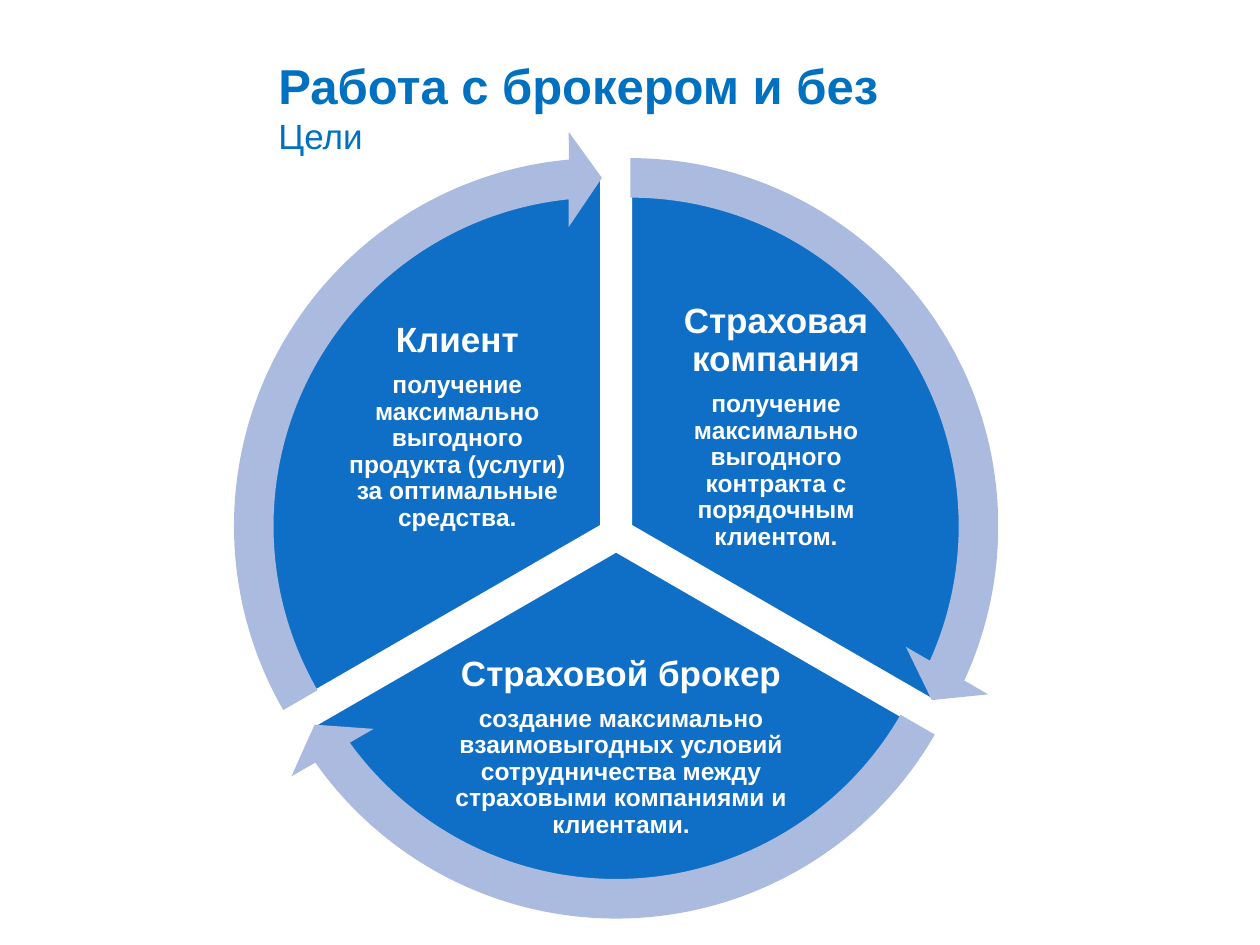
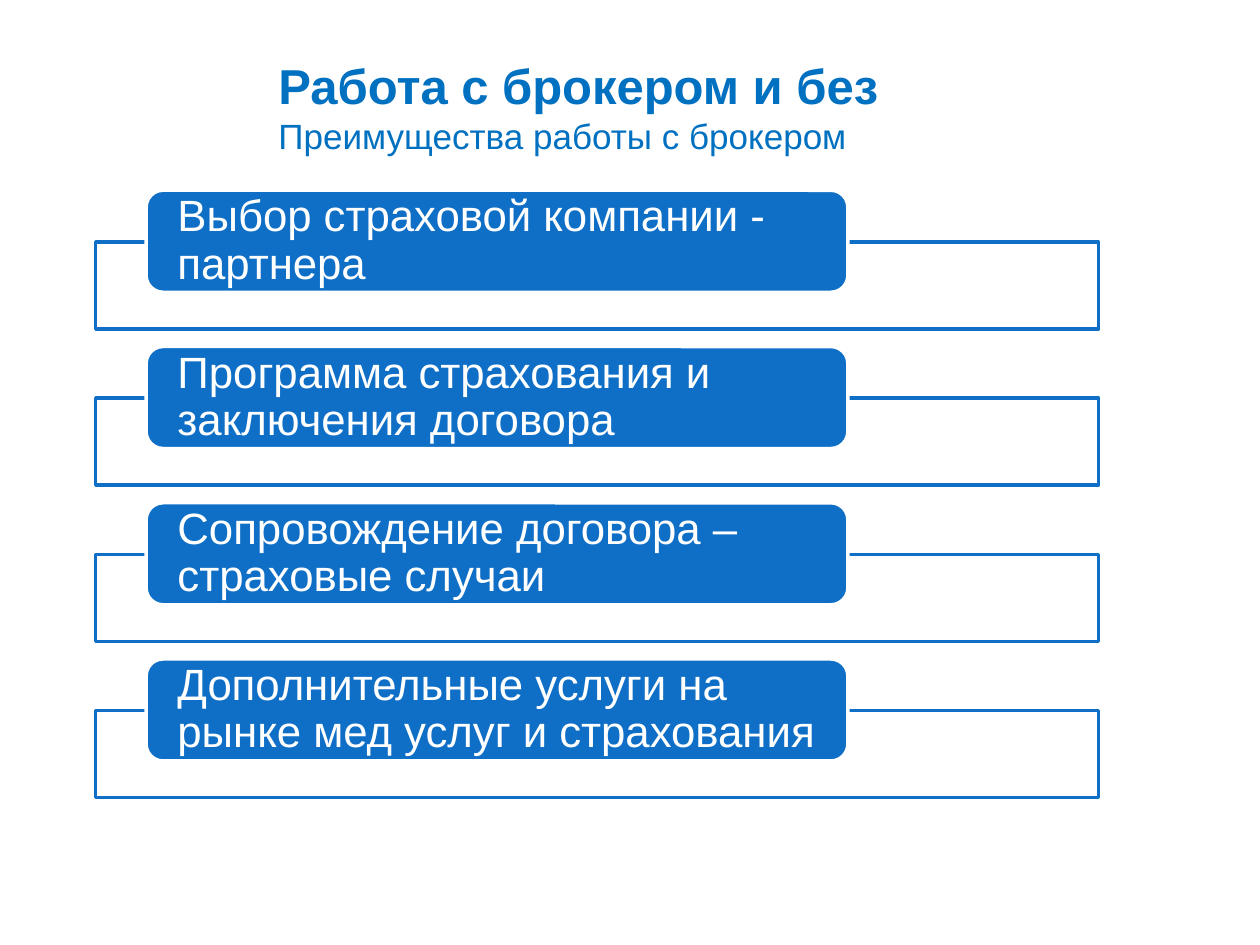
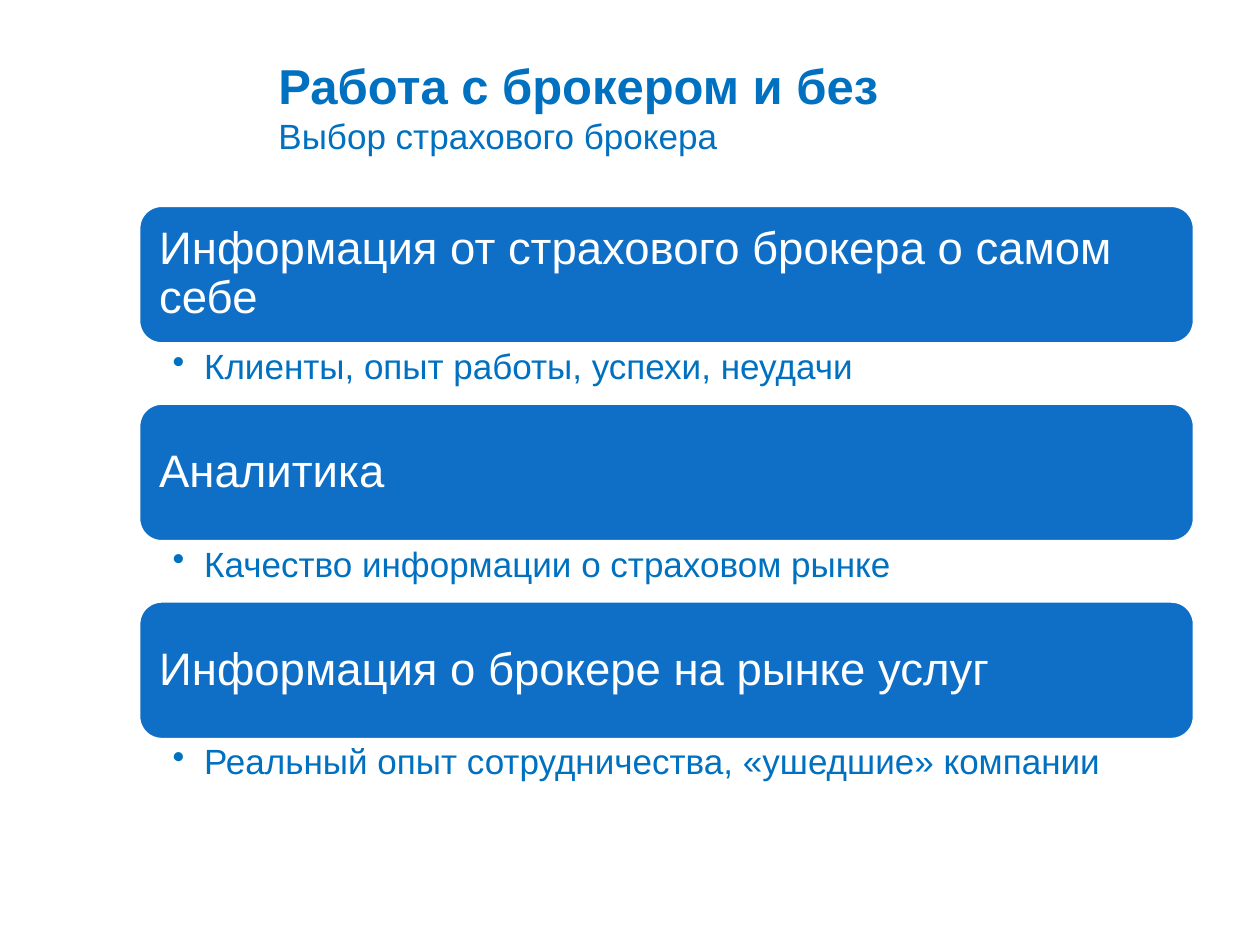
"""Build three slides about working with an insurance broker."""
import math

from lxml import etree
from pptx import Presentation
from pptx import util as u
from pptx.dml.color import RGBColor
from pptx.enum import shapes, text
from pptx.oxml import ns

FONT = "Arial"
BLUE, HEADING, PALE, WHITE = "0F6FC6", "0070C0", "ABBBDF", "FFFFFF"
KIND = shapes.MSO_SHAPE
LEFT, CENTER = text.PP_ALIGN.LEFT, text.PP_ALIGN.CENTER
TOP, MIDDLE = text.MSO_ANCHOR.TOP, text.MSO_ANCHOR.MIDDLE

TITLE = "Работа с брокером и без"
GOALS = [
    ("Страховая компания", "получение максимально выгодного контракта с порядочным клиентом.",
     (5.16, 2.56, 2, 1.66)),
    ("Страховой брокер", "создание максимально взаимовыгодных условий сотрудничества между "
     "страховыми компаниями и клиентами.", (3.43, 5.2, 3, 1.46)),
    ("Клиент", "получение максимально выгодного продукта (услуги) за оптимальные средства.",
     (2.63, 2.56, 2, 1.66)),
]
BENEFITS = [
    "Выбор страховой компании - партнера",
    "Программа страхования и заключения договора",
    "Сопровождение договора – страховые случаи",
    "Дополнительные услуги на рынке мед услуг и страхования",
]
CRITERIA = [
    ("Информация от страхового брокера о самом себе", "Клиенты, опыт работы, успехи, неудачи"),
    ("Аналитика", "Качество информации о страховом рынке"),
    ("Информация о брокере на рынке услуг", "Реальный опыт сотрудничества, «ушедшие» компании"),
]


def color(value):
    return RGBColor.from_string(value)


def inches(values):
    return [u.Inches(value) for value in values]


def add_page(deck, subtitle):
    page = deck.slides.add_slide(deck.slide_layouts[5])
    title = page.shapes.title
    title.left, title.top, title.width, title.height = inches((2.11, 0.35, 6.61, 0.98))
    title.text_frame.vertical_anchor = MIDDLE
    para = title.text_frame.paragraphs[0]
    para.alignment = LEFT
    para.font.name, para.font.color.rgb = FONT, color(HEADING)
    heading = para.add_run()
    heading.text, heading.font.size, heading.font.bold = TITLE, u.Pt(28), True
    para.add_line_break()
    span = para.add_run()
    span.text, span.font.size, span.font.bold = subtitle, u.Pt(20), False
    return page


def draw(page, kind, place, fill, line=None, adjust=()):
    shape = page.shapes.add_shape(kind, *inches(place))
    shape.shadow.inherit = False
    shape.fill.solid()
    shape.fill.fore_color.rgb = color(fill)
    if line:
        shape.line.color.rgb, shape.line.width = color(line), u.Pt(2)
    else:
        shape.line.fill.background()
    for index, value in enumerate(adjust):
        shape.adjustments[index] = value
    return shape


def write(shape, lines, insets, ink=WHITE, align=LEFT, anchor=MIDDLE, bold=False, bullet=None):
    frame = shape.text_frame
    frame.word_wrap, frame.vertical_anchor = True, anchor
    (frame.margin_left, frame.margin_top,
     frame.margin_right, frame.margin_bottom) = inches(insets)
    for index, (words, size) in enumerate(lines):
        para = frame.add_paragraph() if index else frame.paragraphs[0]
        para.text, para.alignment, para.line_spacing = words, align, 0.9
        if index < len(lines) - 1:
            para.space_after = u.Pt(0.35 * size)
        if bullet:
            properties = para._p.get_or_add_pPr()
            properties.set("marL", str(u.Inches(0.25)))
            properties.set("indent", str(-u.Inches(0.25)))
            etree.SubElement(properties, ns.qn("a:buChar")).set("char", bullet)
        para.font.name, para.font.size = FONT, u.Pt(size)
        para.font.bold, para.font.color.rgb = bold, color(ink)


def around(x, y, size):
    return x - size / 2, y - size / 2, size, size


def goals_page(deck):
    page = add_page(deck, "Цели")
    center_x, center_y, spread = 4.89, 4.24, 0.13
    pie, ring, head = 5.59, 6.28, 3.28
    starts, turn = (162, 18, 90), 72
    middles = []
    for index, (name, goal, place) in enumerate(GOALS):
        angle = math.radians(120 * index - 30)
        x = center_x + spread * math.cos(angle)
        y = center_y + spread * math.sin(angle)
        middles.append((x, y))
        end = (starts[index] + turn) % 216
        draw(page, KIND.PIE, around(x, y, pie), BLUE, WHITE, (starts[index], end))
        box = page.shapes.add_textbox(*inches(place))
        write(box, [(name, 20), (goal, 14)], [0.03] * 4, align=CENTER, bold=True)
    for start, (x, y) in zip(starts, middles):
        end = (start + turn) % 216
        draw(page, KIND.CIRCULAR_ARROW, around(x, y, ring), PALE,
             adjust=(0.05, head, end - head, start, 0.06))


def benefits_page(deck):
    page = add_page(deck, "Преимущества работы с брокером")
    for row, benefit in enumerate(BENEFITS):
        top = 1.51 + 1.24 * row
        draw(page, KIND.RECTANGLE, (0.76, top + 0.41, 7.96, 0.69), WHITE, BLUE)
        label = draw(page, KIND.ROUNDED_RECTANGLE, (1.16, top, 5.57, 0.81), BLUE, WHITE)
        write(label, [(benefit, 25)], (0.21, 0, 0.21, 0))


def criteria_page(deck):
    page = add_page(deck, "Выбор страхового брокера")
    left, width, height = 1.1, 8.38, 1.1
    for row, (name, detail) in enumerate(CRITERIA):
        top = 1.63 + 1.57 * row
        bar = draw(page, KIND.ROUNDED_RECTANGLE, (left, top, width, height), BLUE, WHITE)
        write(bar, [(name, 26)], [0.11] * 4)
        box = page.shapes.add_textbox(*inches((left, top + height, width, 0.47)))
        write(box, [(detail, 20)], (0.27, 0.04, 0.2, 0.04), HEADING, anchor=TOP, bullet="•")


def main():
    deck = Presentation()
    deck.slide_width, deck.slide_height = inches((10, 7.5))
    goals_page(deck)
    benefits_page(deck)
    criteria_page(deck)
    deck.save("out.pptx")


if __name__ == "__main__":
    main()
